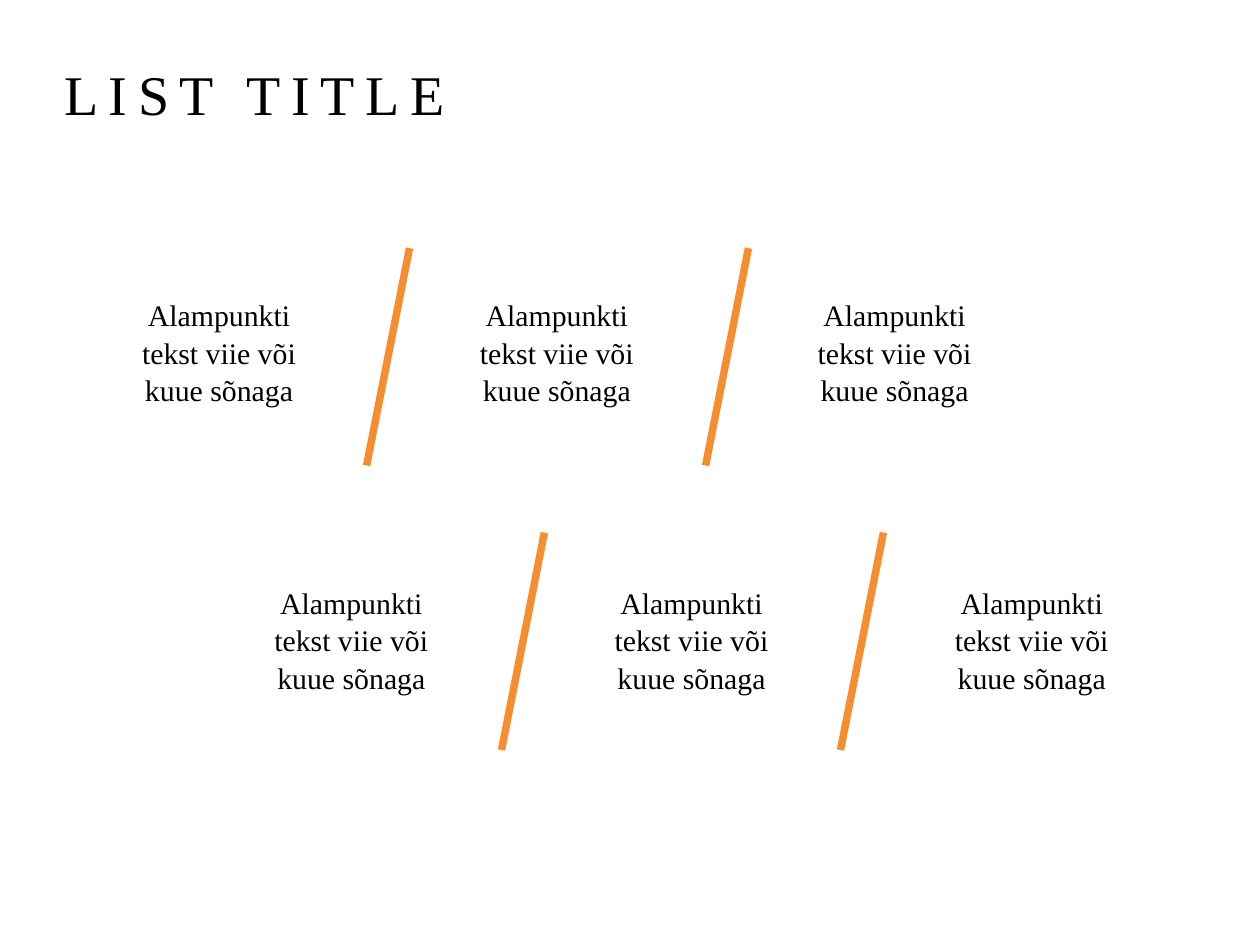
"""Build a list slide with two staggered rows of points split by slanted lines."""
from lxml.etree import SubElement
from pptx import Presentation
from pptx.dml.color import RGBColor
from pptx.enum.shapes import MSO_CONNECTOR
from pptx.enum.text import MSO_ANCHOR, MSO_AUTO_SIZE, PP_ALIGN
from pptx.oxml.ns import qn
from pptx.util import Pt

COLORS = {"text": "000000", "slash": "F68D2E"}
POINT_LINES = ["Alampunkti", "tekst viie või", "kuue sõnaga"]
ROWS = [
    {"left": 66.2, "top": 166.3, "pitch": 193, "slash_left": 209.5, "slash_top": 141.8},
    {"left": 141.8, "top": 330.5, "pitch": 194.4, "slash_left": 286.6, "slash_top": 304.4},
]
POINTS_PER_ROW = 3
SLASH_PITCH = 193.7


class ListSlide:
    font_name = "Times New Roman"
    title_size = 32
    point_size = 17
    slash_width = 4.25

    def __init__(self, presentation):
        self.slide = presentation.slides.add_slide(presentation.slide_layouts[5])

    def style(self, paragraph, size, align):
        paragraph.alignment = align
        paragraph.font.name = self.font_name
        paragraph.font.size = Pt(size)
        paragraph.font.color.rgb = RGBColor.from_string(COLORS["text"])

    def title(self, text, left, top, width, height, tracking):
        heading = self.slide.shapes.title
        heading.left, heading.top = Pt(left), Pt(top)
        heading.width, heading.height = Pt(width), Pt(height)
        frame = heading.text_frame
        frame.text = text
        frame.vertical_anchor = MSO_ANCHOR.BOTTOM
        frame.auto_size = MSO_AUTO_SIZE.NONE
        paragraph = frame.paragraphs[0]
        self.style(paragraph, self.title_size, PP_ALIGN.LEFT)
        paragraph.runs[0].font._element.set("spc", str(tracking * 100))

    def point(self, lines, left, top, width=118, height=69.1):
        box = self.slide.shapes.add_textbox(Pt(left), Pt(top), Pt(width), Pt(height))
        frame = box.text_frame
        frame.word_wrap = True
        frame.auto_size = MSO_AUTO_SIZE.SHAPE_TO_FIT_TEXT
        frame.vertical_anchor = MSO_ANCHOR.MIDDLE
        frame.text = "\n".join(lines)
        for paragraph in frame.paragraphs:
            paragraph.line_spacing = 1.05
            self.style(paragraph, self.point_size, PP_ALIGN.CENTER)

    def slash(self, left, top, width=24.5, height=124.2):
        divider = self.slide.shapes.add_connector(
            MSO_CONNECTOR.STRAIGHT, Pt(left + width), Pt(top), Pt(left), Pt(top + height)
        )
        divider.line.color.rgb = RGBColor.from_string(COLORS["slash"])
        divider.line.width = Pt(self.slash_width)
        SubElement(divider._element.spPr, qn("a:effectLst"))


def main():
    presentation = Presentation()
    presentation.slide_width, presentation.slide_height = Pt(720), Pt(540)
    page = ListSlide(presentation)
    page.title("LIST TITLE", 29.5, -13, 659, 89.3, tracking=6)
    for row in ROWS:
        for column in range(POINTS_PER_ROW - 1):
            page.slash(row["slash_left"] + column * SLASH_PITCH, row["slash_top"])
        for column in range(POINTS_PER_ROW):
            page.point(POINT_LINES, row["left"] + column * row["pitch"], row["top"])
    presentation.save("out.pptx")


if __name__ == "__main__":
    main()
